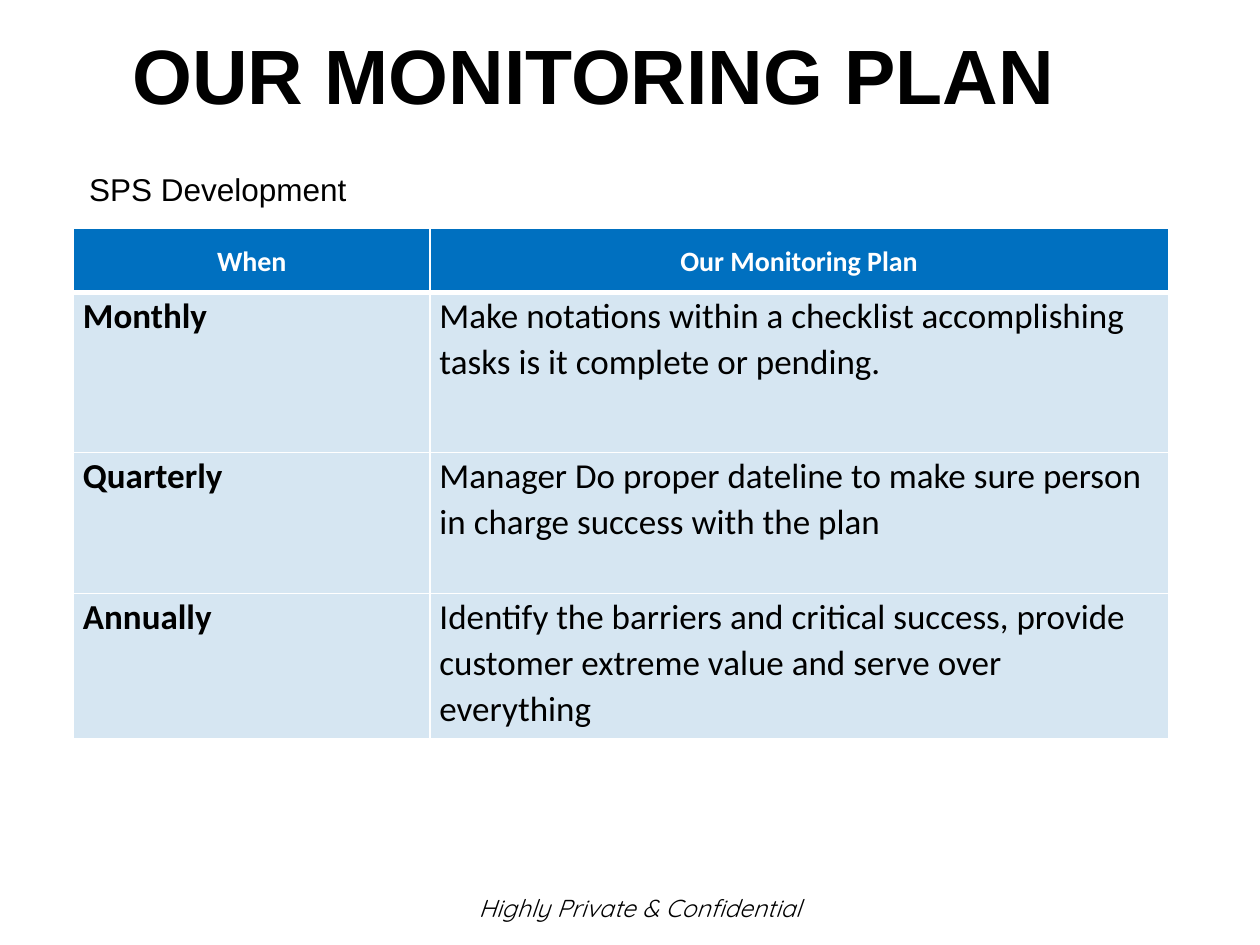
import pptx
import pptx.dml.color
import pptx.enum.text
import pptx.oxml
import pptx.oxml.ns
import pptx.util
from dataclasses import dataclass

Pt = pptx.util.Pt
Align = pptx.enum.text.PP_ALIGN
Anchor = pptx.enum.text.MSO_ANCHOR


@dataclass(frozen=True)
class Theme:
    black: str = "000000"
    white: str = "FFFFFF"
    header_fill: str = "0070C0"
    body_fill: str = "D6E6F2"
    heading_font: str = "Arial"
    table_font: str = "Calibri"
    footer_font: str = "Quicksand"
    title_size: int = 44
    subtitle_size: int = 18
    header_size: int = 16
    body_size: int = 20
    footer_size: int = 14


THEME = Theme()

COLUMN_WIDTHS = (203.75, 421.9)
ROW_HEIGHTS = (36.7, 91.4, 80.6, 82.8)
MONITORING_PLAN = (
    ("When", "Our Monitoring Plan"),
    ("Monthly", "Make notations within a checklist accomplishing tasks "
                "is it complete or pending."),
    ("Quarterly", "Manager Do proper dateline to make sure person "
                  "in charge success with the plan"),
    ("Annually", "Identify the barriers and critical success, provide "
                 "customer extreme value and serve over everything"),
)


def rgb(color):
    return pptx.dml.color.RGBColor.from_string(color)


def style_font(font, name, size, color, bold=False, italic=False):
    font.name = name
    font.size = Pt(size)
    font.color.rgb = rgb(color)
    font.bold = bold
    font.italic = italic


def add_text(slide, text, box, name, size, align=Align.LEFT, wrap=True,
             bold=False, italic=False):
    shape = slide.shapes.add_textbox(*(Pt(length) for length in box))
    frame = shape.text_frame
    frame.word_wrap = wrap
    paragraph = frame.paragraphs[0]
    paragraph.text = text
    paragraph.alignment = align
    style_font(paragraph.font, name, size, THEME.black, bold, italic)
    return frame


def set_borders(cell, bottom_width):
    properties = cell._tc.get_or_add_tcPr()
    widths = {"lnL": 1, "lnR": 1, "lnT": 1, "lnB": bottom_width}
    # Borders must come before the fill in the cell properties
    for index, (side, width) in enumerate(widths.items()):
        line = pptx.oxml.parse_xml(
            f'<a:{side} {pptx.oxml.ns.nsdecls("a")} w="{Pt(width)}">'
            f'<a:solidFill><a:srgbClr val="{THEME.white}"/></a:solidFill>'
            f'</a:{side}>')
        properties.insert(index, line)


def fill_cell(cell, text, is_header, is_label):
    cell.fill.solid()
    cell.fill.fore_color.rgb = rgb(
        THEME.header_fill if is_header else THEME.body_fill)
    cell.margin_left = cell.margin_right = Pt(5.4)
    cell.margin_top = cell.margin_bottom = 0
    cell.vertical_anchor = Anchor.MIDDLE if is_header else Anchor.TOP
    paragraph = cell.text_frame.paragraphs[0]
    paragraph.text = text
    paragraph.alignment = Align.CENTER if is_header else Align.LEFT
    paragraph.line_spacing = 1.07
    style_font(paragraph.font, THEME.table_font,
               THEME.header_size if is_header else THEME.body_size,
               THEME.white if is_header else THEME.black,
               bold=is_header or is_label)
    set_borders(cell, 3 if is_header else 1)


def add_plan_table(slide, left, top):
    table = slide.shapes.add_table(
        len(ROW_HEIGHTS), len(COLUMN_WIDTHS), Pt(left), Pt(top),
        Pt(sum(COLUMN_WIDTHS)), Pt(sum(ROW_HEIGHTS))).table
    for column, width in zip(table.columns, COLUMN_WIDTHS):
        column.width = Pt(width)
    for row_index, (row, height) in enumerate(zip(table.rows, ROW_HEIGHTS)):
        row.height = Pt(height)
        for column_index, text in enumerate(MONITORING_PLAN[row_index]):
            fill_cell(row.cells[column_index], text,
                      is_header=row_index == 0, is_label=column_index == 0)


def main():
    presentation = pptx.Presentation()
    presentation.slide_width = Pt(720)
    presentation.slide_height = Pt(540)
    slide = presentation.slides.add_slide(presentation.slide_layouts[6])

    # Footer
    footer = add_text(slide, "Highly Private & Confidential",
                      (266.4, 510.5, 242.6, 16.6), THEME.footer_font,
                      THEME.footer_size, italic=True)
    footer.vertical_anchor = Anchor.MIDDLE
    footer.margin_top = footer.margin_bottom = Pt(7.2)

    # Title
    add_text(slide, "OUR MONITORING PLAN", (30.2, 12.2, 618.5, 59.8),
             THEME.heading_font, THEME.title_size, Align.CENTER, bold=True)

    # Monitoring table and its caption
    add_plan_table(slide, 42, 130.5)
    caption = add_text(slide, "SPS Development", (43.9, 93.6, 162.7, 28.8),
                       THEME.heading_font, THEME.subtitle_size, wrap=False)
    caption.auto_size = pptx.enum.text.MSO_AUTO_SIZE.SHAPE_TO_FIT_TEXT

    presentation.save("out.pptx")


if __name__ == "__main__":
    main()
